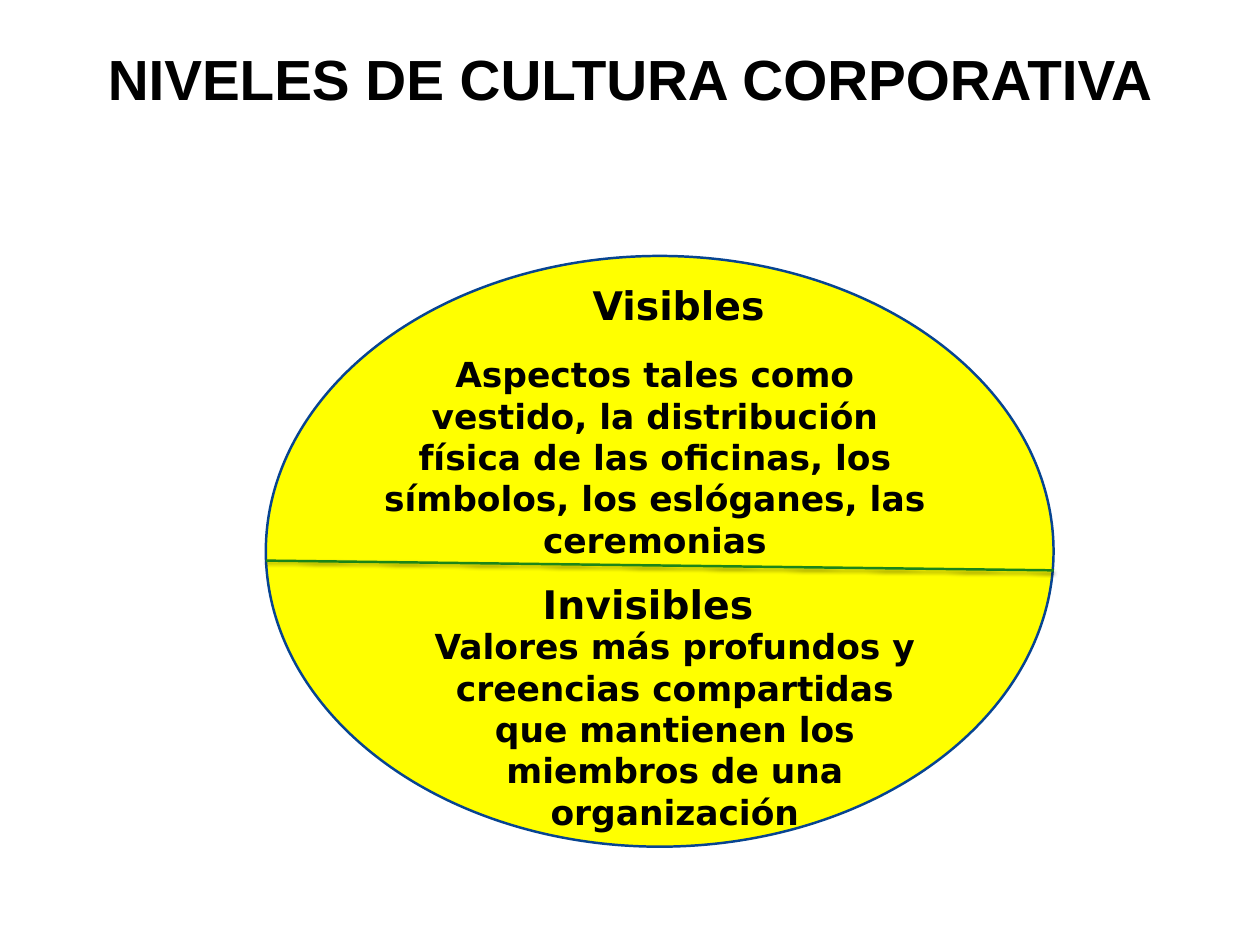
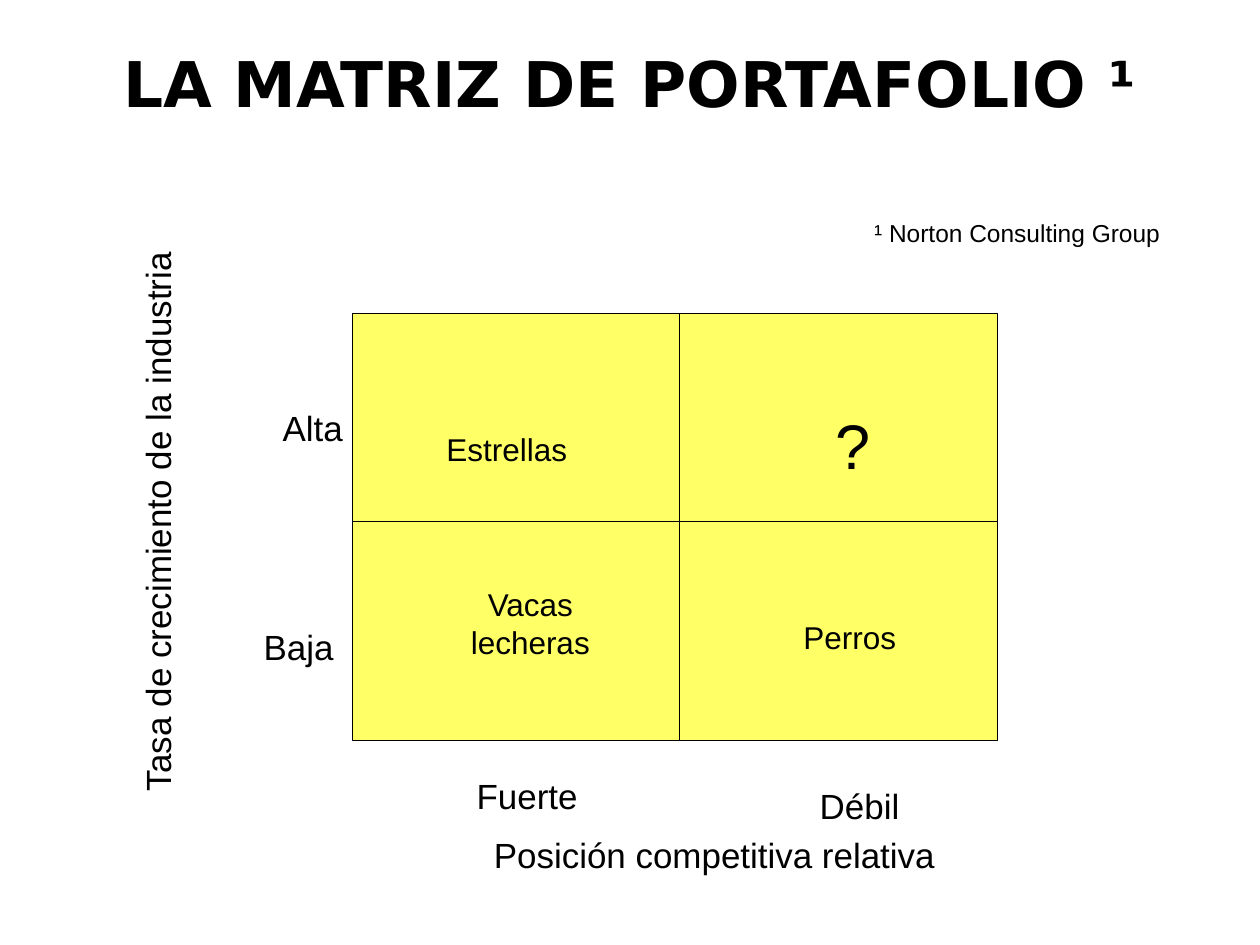
"""Build two slides on corporate culture levels and the portfolio matrix."""
from dataclasses import dataclass

from lxml.etree import SubElement
from pptx import Presentation
from pptx.dml.color import RGBColor
from pptx.enum.shapes import MSO_CONNECTOR, MSO_SHAPE
from pptx.enum.text import MSO_ANCHOR, MSO_AUTO_SIZE, PP_ALIGN
from pptx.oxml.ns import qn
from pptx.util import Inches, Pt


@dataclass(frozen=True)
class Theme:
    """Colours, fonts and type sizes of the presentation."""

    black: str = "000000"
    ellipse_fill: str = "FFFF00"
    ellipse_line: str = "074491"
    divider: str = "1B8518"
    matrix_fill: str = "FFFF66"
    plain_font: str = "Arial"
    strong_font: str = "DejaVu Sans"
    culture_title: float = 46
    matrix_title: float = 51.2
    heading: float = 32
    body: float = 28
    axis: float = 28.4
    cell: float = 25.6
    symbol: float = 51.2
    note: float = 19.9


THEME = Theme()


def write_text(shape, text, size, font, bold, anchor):
    """Put one centred paragraph into a shape."""
    frame = shape.text_frame
    frame.text = text
    frame.word_wrap = True
    frame.auto_size = MSO_AUTO_SIZE.NONE
    frame.vertical_anchor = anchor
    frame.margin_left = frame.margin_right = Inches(0.14)
    frame.margin_top = frame.margin_bottom = Inches(0.07)
    paragraph = frame.paragraphs[0]
    paragraph.alignment = PP_ALIGN.CENTER
    paragraph.font.size = Pt(size)
    paragraph.font.name = font
    paragraph.font.bold = bold
    paragraph.font.color.rgb = RGBColor.from_string(THEME.black)


def add_titled_slide(presentation, title, size, font):
    """Add a slide with its title placed at the top."""
    slide = presentation.slides.add_slide(presentation.slide_layouts[5])
    shape = slide.shapes.title
    shape.left, shape.top = Inches(0.71), Inches(0.43)
    shape.width, shape.height = Inches(12.8), Inches(1.78)
    write_text(shape, title, size, font, True, MSO_ANCHOR.TOP)
    return slide


def add_text(slide, text, box, size, font=THEME.plain_font, bold=False,
             anchor=MSO_ANCHOR.BOTTOM):
    """Add a text box and return it."""
    shape = slide.shapes.add_textbox(*map(Inches, box))
    write_text(shape, text, size, font, bold, anchor)
    return shape


def add_panel(slide, kind, box, fill, line, width):
    """Add a filled and outlined preset shape."""
    shape = slide.shapes.add_shape(kind, *map(Inches, box))
    shape.shadow.inherit = False
    shape.fill.solid()
    shape.fill.fore_color.rgb = RGBColor.from_string(fill)
    shape.line.color.rgb = RGBColor.from_string(line)
    shape.line.width = Pt(width)


def add_line(slide, start, end, color, width):
    """Add a straight line and return its effect list."""
    line = slide.shapes.add_connector(
        MSO_CONNECTOR.STRAIGHT, *map(Inches, (*start, *end)))
    line.line.color.rgb = RGBColor.from_string(color)
    line.line.width = Pt(width)
    return SubElement(line._element.spPr, qn("a:effectLst"))


def add_soft_shadow(effects):
    """Add a soft downward shadow to an effect list."""
    shadow = SubElement(
        effects, qn("a:outerShdw"), blurRad=str(Pt(3.1)), dist=str(Pt(1.6)),
        dir="5400000", rotWithShape="0")
    color = SubElement(shadow, qn("a:srgbClr"), val=THEME.black)
    SubElement(color, qn("a:alpha"), val="38000")


def build_culture(presentation):
    """Build the slide on the levels of corporate culture."""
    slide = add_titled_slide(presentation, "NIVELES DE CULTURA CORPORATIVA",
                             THEME.culture_title, THEME.plain_font)
    left, width = 3, 8.89
    add_panel(slide, MSO_SHAPE.OVAL, (left, 2.89, width, 6.67),
              THEME.ellipse_fill, THEME.ellipse_line, 2)
    add_soft_shadow(add_line(slide, (left, 6.33), (left + width, 6.44),
                             THEME.divider, 2))
    levels = (
        ("Visibles", (6.48, 3.11, 2.36, 0.68), THEME.heading),
        ("Aspectos tales como vestido, la distribución física de las "
         "oficinas, los símbolos, los eslóganes, las ceremonias",
         (4.12, 3.92, 6.54, 2.5), THEME.body),
        ("Invisibles", (5.7, 6.48, 3.23, 0.75), THEME.heading),
        ("Valores más profundos y creencias compartidas que mantienen "
         "los miembros de una organización",
         (4.67, 6.99, 5.89, 2.5), THEME.body),
    )
    for text, box, size in levels:
        add_text(slide, text, box, size, THEME.strong_font, True,
                 MSO_ANCHOR.TOP)


def build_matrix(presentation):
    """Build the slide with the portfolio matrix."""
    slide = add_titled_slide(presentation, "LA MATRIZ DE PORTAFOLIO ¹",
                             THEME.matrix_title, THEME.strong_font)
    left, top, width, height = 3.98, 3.54, 7.28, 4.82
    middle_x, middle_y = 7.67, 5.89
    add_panel(slide, MSO_SHAPE.RECTANGLE, (left, top, width, height),
              THEME.matrix_fill, THEME.black, 0.75)
    add_line(slide, (middle_x, top), (middle_x, top + height),
             THEME.black, 0.75)
    add_line(slide, (left, middle_y), (left + width, middle_y),
             THEME.black, 0.75)
    labels = (
        ("Estrellas", (4.77, 4.39, 1.9, 0.96), THEME.cell),
        ("?", (8.9, 4.55, 1.45, 0.96), THEME.symbol),
        ("Vacas lecheras", (4.98, 6.57, 2.01, 0.96), THEME.cell),
        ("Perros", (8.58, 6.52, 2.02, 0.96), THEME.cell),
        ("Fuerte", (5, 8.33, 1.9, 0.96), THEME.axis),
        ("Débil", (8.69, 8.44, 2.02, 0.96), THEME.axis),
        ("Posición competitiva relativa", (4.65, 9.37, 6.83, 0.58),
         THEME.axis),
        ("Alta", (2.8, 4.55, 1.46, 0.58), THEME.axis),
        ("Baja", (2.64, 6.65, 1.46, 0.96), THEME.axis),
        ("¹ Norton Consulting Group", (9.35, 2.42, 4.26, 0.44), THEME.note),
    )
    for text, box, size in labels:
        add_text(slide, text, box, size)
    growth = add_text(slide, "Tasa de crecimiento de la industria",
                      (-2.41, 5.6, 8.4, 0.58), THEME.axis)
    growth.rotation = 270


def main():
    """Create and save the presentation."""
    presentation = Presentation()
    presentation.slide_width = Inches(14.22)
    presentation.slide_height = Inches(10.67)
    build_culture(presentation)
    build_matrix(presentation)
    presentation.save("out.pptx")


if __name__ == "__main__":
    main()
